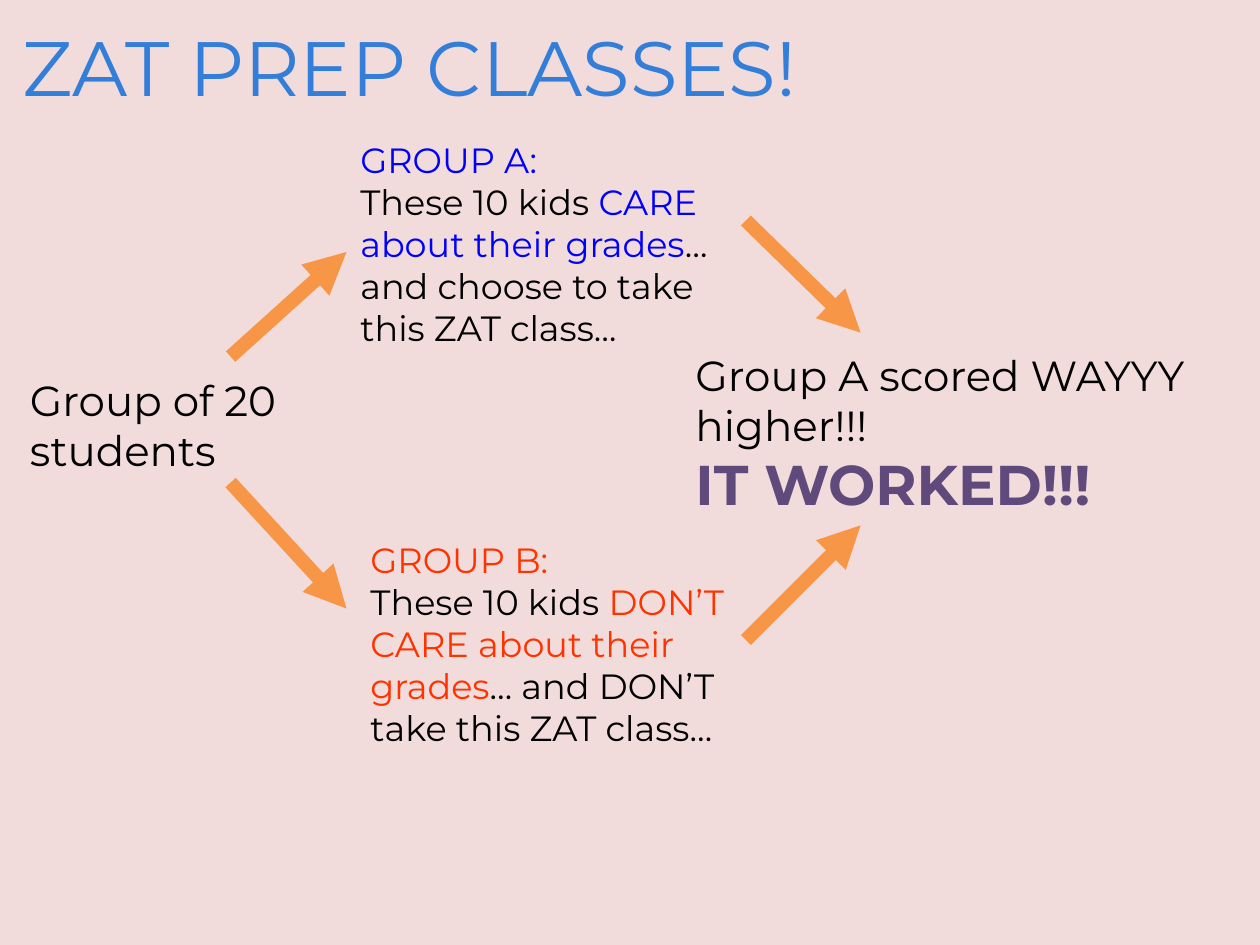
"""Build the test prep classes slide."""
from dataclasses import dataclass
from typing import NamedTuple

import pptx
import pptx.dml.color
import pptx.enum.shapes
import pptx.enum.text
import pptx.oxml
import pptx.oxml.ns
import pptx.slide
import pptx.text.text
import pptx.util

Inches = pptx.util.Inches


@dataclass(frozen=True)
class Theme:
    font: str = "Montserrat"
    background: str = "F2DCDB"
    title: str = "337ED9"
    text: str = "000000"
    group_a: str = "0000FF"
    group_b: str = "FF3300"
    result: str = "604A7B"
    arrow: str = "F79646"
    title_size: int = 44
    result_size: int = 32
    body_size: int = 24
    group_size: int = 20
    arrow_width: int = 8
    margin: float = 0.13


THEME = Theme()


class Run(NamedTuple):
    text: str
    size: int
    color: str = THEME.text
    bold: bool = False


class Box(NamedTuple):
    left: float
    top: float
    width: float
    height: float
    paragraphs: list[list[Run]]
    insets: tuple[float, float, float, float] = (0.06, 0.1, 0.1, 0.05)


class Arrow(NamedTuple):
    start: tuple[float, float]
    end: tuple[float, float]


def group_paragraphs(name: str, color: str, attitude: str, choice: str) -> list[list[Run]]:
    """Return the heading and description of one group."""
    size = THEME.group_size
    return [
        [Run(f"GROUP {name}:", size, color)],
        [
            Run("These 10 kids ", size),
            Run(f"{attitude} about their grades", size, color),
            Run(f"… and {choice} this ZAT class…", size),
        ],
    ]


BOXES = [
    Box(0.01, 2.92, 3, 1.83, [[Run("Group of 20 students", THEME.body_size)]],
        (0.1, 0.05, 0.1, 0.05)),
    Box(5.33, 2.67, 4.25, 1.42, [
        [Run("Group A scored WAYYY higher!!!", THEME.body_size)],
        [Run("IT WORKED!!!", THEME.result_size, THEME.result, True)],
    ]),
    Box(2.67, 1, 3.42, 1.33,
        group_paragraphs("A", THEME.group_a, "CARE", "choose to take")),
    Box(2.75, 4.17, 3.25, 1.33,
        group_paragraphs("B", THEME.group_b, "DON’T CARE", "DON’T take")),
]

ARROWS = [
    Arrow((1.83, 2.83), (2.75, 2)),
    Arrow((5.92, 1.75), (6.83, 2.64)),
    Arrow((1.83, 3.83), (2.75, 4.83)),
    Arrow((5.92, 5.08), (6.83, 4.17)),
]


def rgb(color: str) -> pptx.dml.color.RGBColor:
    """Convert a hexadecimal colour."""
    return pptx.dml.color.RGBColor.from_string(color)


def add_run(paragraph: pptx.text.text._Paragraph, content: Run) -> None:
    """Append one formatted run."""
    run = paragraph.add_run()
    run.text = content.text
    run.font.name = THEME.font
    run.font.size = pptx.util.Pt(content.size)
    run.font.bold = content.bold
    run.font.color.rgb = rgb(content.color)


def set_title(slide: pptx.slide.Slide) -> None:
    """Place and fill the title placeholder."""
    title = slide.shapes.title
    title.left, title.top = Inches(0.08), Inches(0.05)
    title.width, title.height = Inches(9), Inches(0.95)
    title.text_frame.vertical_anchor = pptx.enum.text.MSO_ANCHOR.MIDDLE
    paragraph = title.text_frame.paragraphs[0]
    paragraph.alignment = pptx.enum.text.PP_ALIGN.LEFT
    add_run(paragraph, Run("ZAT PREP CLASSES!", THEME.title_size, THEME.title))


def add_box(slide: pptx.slide.Slide, box: Box) -> None:
    """Add a wrapped text box with indented paragraphs."""
    shape = slide.shapes.add_textbox(*map(Inches, box[:4]))
    frame = shape.text_frame
    frame.word_wrap = True
    (frame.margin_left, frame.margin_top,
     frame.margin_right, frame.margin_bottom) = map(Inches, box.insets)
    for index, runs in enumerate(box.paragraphs):
        paragraph = frame.add_paragraph() if index else frame.paragraphs[0]
        properties = paragraph._p.get_or_add_pPr()
        properties.set("marL", str(Inches(THEME.margin)))
        properties.set("indent", "0")
        for run in runs:
            add_run(paragraph, run)


def add_arrow(slide: pptx.slide.Slide, arrow: Arrow) -> None:
    """Add a thick connector with a triangular head."""
    connector = slide.shapes.add_connector(
        pptx.enum.shapes.MSO_CONNECTOR.STRAIGHT,
        *map(Inches, arrow.start + arrow.end))
    connector.line.color.rgb = rgb(THEME.arrow)
    connector.line.width = pptx.util.Pt(THEME.arrow_width)
    head = pptx.oxml.parse_xml(
        f'<a:tailEnd {pptx.oxml.ns.nsdecls("a")} type="triangle"/>')
    connector.line._get_or_add_ln().append(head)
    effects = pptx.oxml.parse_xml(f'<a:effectLst {pptx.oxml.ns.nsdecls("a")}/>')
    connector._element.spPr.append(effects)


def main() -> None:
    """Build and save the presentation."""
    presentation = pptx.Presentation()
    presentation.slide_width = Inches(10)
    presentation.slide_height = Inches(7.5)
    slide = presentation.slides.add_slide(
        presentation.slide_layouts.get_by_name("Title Only"))
    slide.background.fill.solid()
    slide.background.fill.fore_color.rgb = rgb(THEME.background)
    set_title(slide)
    for box in BOXES:
        add_box(slide, box)
    for arrow in ARROWS:
        add_arrow(slide, arrow)
    presentation.save("out.pptx")


if __name__ == "__main__":
    main()
